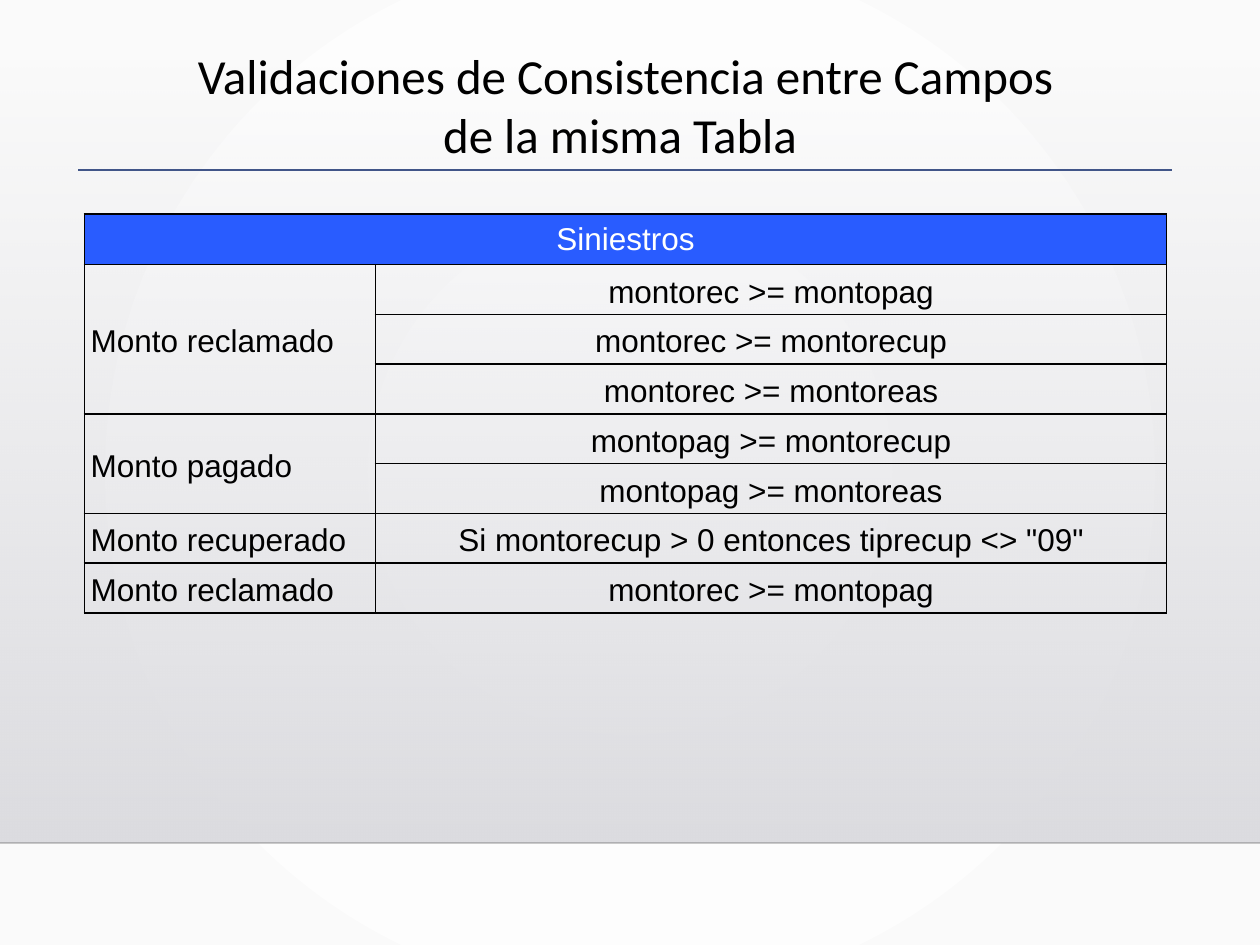
"""Build the slide on consistency checks between fields of one table."""
import pptx
import pptx.chart.data
import pptx.dml.color
import pptx.enum.shapes
import pptx.enum.text
import pptx.oxml
import pptx.oxml.ns
import pptx.util
from lxml import etree

Inches, Pt = pptx.util.Inches, pptx.util.Pt
RGB = pptx.dml.color.RGBColor.from_string
qn = pptx.oxml.ns.qn
ALIGN, ANCHOR = pptx.enum.text.PP_ALIGN, pptx.enum.text.MSO_ANCHOR

TITLE = "Validaciones de Consistencia entre Campos de la misma Tabla "
HEADER = "Siniestros"
GROUPS = [
    ("Monto reclamado", ["montorec >= montopag", "montorec >= montorecup", "montorec >= montoreas"]),
    ("Monto pagado", ["montopag >= montorecup", "montopag >= montoreas"]),
    ("Monto recuperado", ['Si montorecup > 0 entonces tiprecup <> "09"']),
    ("Monto reclamado", ["montorec >= montopag"]),
]
COLUMNS, ROW_HEIGHT = (2.31, 6.28), 0.395
THEME = {
    "background": ("FFFFFF", "FAFAFA"), "band": ("DCDCE0", "DEDEE2"),
    "edge": "000001", "rule": "415588", "header": "295CFF",
    "text": "000000", "header_text": "FFFFFF", "border": "000000",
    "title_font": "Calibri", "body_font": "Arial", "title_size": 28, "body_size": 18,
}


def write(tf, text, font=THEME["body_font"], size=THEME["body_size"],
          color=THEME["text"], align=ALIGN.CENTER, spacing=None):
    p = tf.paragraphs[0]
    p.alignment = align
    if spacing:
        p.line_spacing = spacing
    r = p.add_run()
    r.text = text
    r.font.name, r.font.size = font, Pt(size)
    r.font.color.rgb = RGB(color)


def set_alpha(color_element, percent):
    etree.SubElement(color_element, qn("a:alpha")).set("val", str(percent * 1000))


def add_gradient(fill, owner, colors):
    fill.gradient()
    for stop, color, position in zip(fill.gradient_stops, colors, (0, 1)):
        stop.color.rgb = RGB(color)
        stop.position = position
    return owner.find(".//" + qn("a:gradFill"))


def paint_background(s):
    grad = add_gradient(s.background.fill, s.element, THEME["background"])
    grad.remove(grad.find(qn("a:lin")))
    path = etree.SubElement(grad, qn("a:path"))
    path.set("path", "circle")
    rect = etree.SubElement(path, qn("a:fillToRect"))
    for side in "ltrb":
        rect.set(side, "50000")


def add_band(s):
    sp = s.shapes.add_shape(pptx.enum.shapes.MSO_SHAPE.RECTANGLE,
                            0, Inches(0.51), Inches(10), Inches(6.18))
    sp.shadow.inherit = False
    sp.line.fill.background()
    grad = add_gradient(sp.fill, sp.element, THEME["band"])
    sp.fill.gradient_angle = 270
    for color, alpha in zip(grad.iter(qn("a:srgbClr")), (0, 100)):
        set_alpha(color, alpha)


def add_rule(s, left, right, y, color, width, alpha=100):
    line = s.shapes.add_connector(pptx.enum.shapes.MSO_CONNECTOR.STRAIGHT,
                                  Inches(left), Inches(y), Inches(right), Inches(y))
    line.line.color.rgb = RGB(color)
    line.line.width = Pt(width)
    set_alpha(line.element.find(".//" + qn("a:srgbClr")), alpha)
    etree.SubElement(line.element.spPr, qn("a:effectLst"))


def add_title(s):
    sp = s.shapes.add_textbox(Inches(1.28), Inches(0.31), Inches(7.37), Inches(1.04))
    sp.text_frame.word_wrap = True
    write(sp.text_frame, TITLE, font=THEME["title_font"], size=THEME["title_size"])


def style_cell(cell):
    cell.fill.background()
    cell.vertical_anchor = ANCHOR.MIDDLE
    tcPr = cell._tc.get_or_add_tcPr()
    for i, side in enumerate(("lnL", "lnR", "lnT", "lnB")):
        ln = etree.Element(qn("a:" + side), w=str(Pt(1)))
        fill = etree.SubElement(ln, qn("a:solidFill"))
        etree.SubElement(fill, qn("a:srgbClr")).set("val", THEME["border"])
        tcPr.insert(i, ln)


def write_body(cell, text, align):
    cell.margin_left = cell.margin_right = Inches(0.05)
    cell.margin_top = cell.margin_bottom = 0
    write(cell.text_frame, text, align=align, spacing=1.15)


def add_rules_table(s):
    count = 1 + sum(len(checks) for _, checks in GROUPS)
    table = s.shapes.add_table(count, len(COLUMNS), Inches(0.67), Inches(1.7),
                               Inches(sum(COLUMNS)), Inches(count * ROW_HEIGHT)).table
    table.first_row = table.horz_banding = False
    for column, width in zip(table.columns, COLUMNS):
        column.width = Inches(width)
    for row in table.rows:
        row.height = Inches(ROW_HEIGHT)
    for cell in table.iter_cells():
        style_cell(cell)
    head = table.cell(0, 0)
    head.merge(table.cell(0, 1))
    head.fill.solid()
    head.fill.fore_color.rgb = RGB(THEME["header"])
    write(head.text_frame, HEADER, color=THEME["header_text"])
    top = 1
    for field, checks in GROUPS:
        label = table.cell(top, 0)
        if len(checks) > 1:
            label.merge(table.cell(top + len(checks) - 1, 0))
        write_body(label, field, ALIGN.JUSTIFY)
        for i, check in enumerate(checks):
            write_body(table.cell(top + i, 1), check, ALIGN.CENTER)
        top += len(checks)


def main():
    prs = pptx.Presentation()
    prs.slide_width, prs.slide_height = Inches(10), Inches(7.5)
    s = prs.slides.add_slide(prs.slide_layouts[6])
    paint_background(s)
    add_band(s)
    add_rule(s, 0, 10, 6.69, THEME["edge"], 1, alpha=20)
    add_title(s)
    add_rule(s, 0.62, 9.3, 1.35, THEME["rule"], 0.75)
    add_rules_table(s)
    prs.save("out.pptx")


if __name__ == "__main__":
    main()
